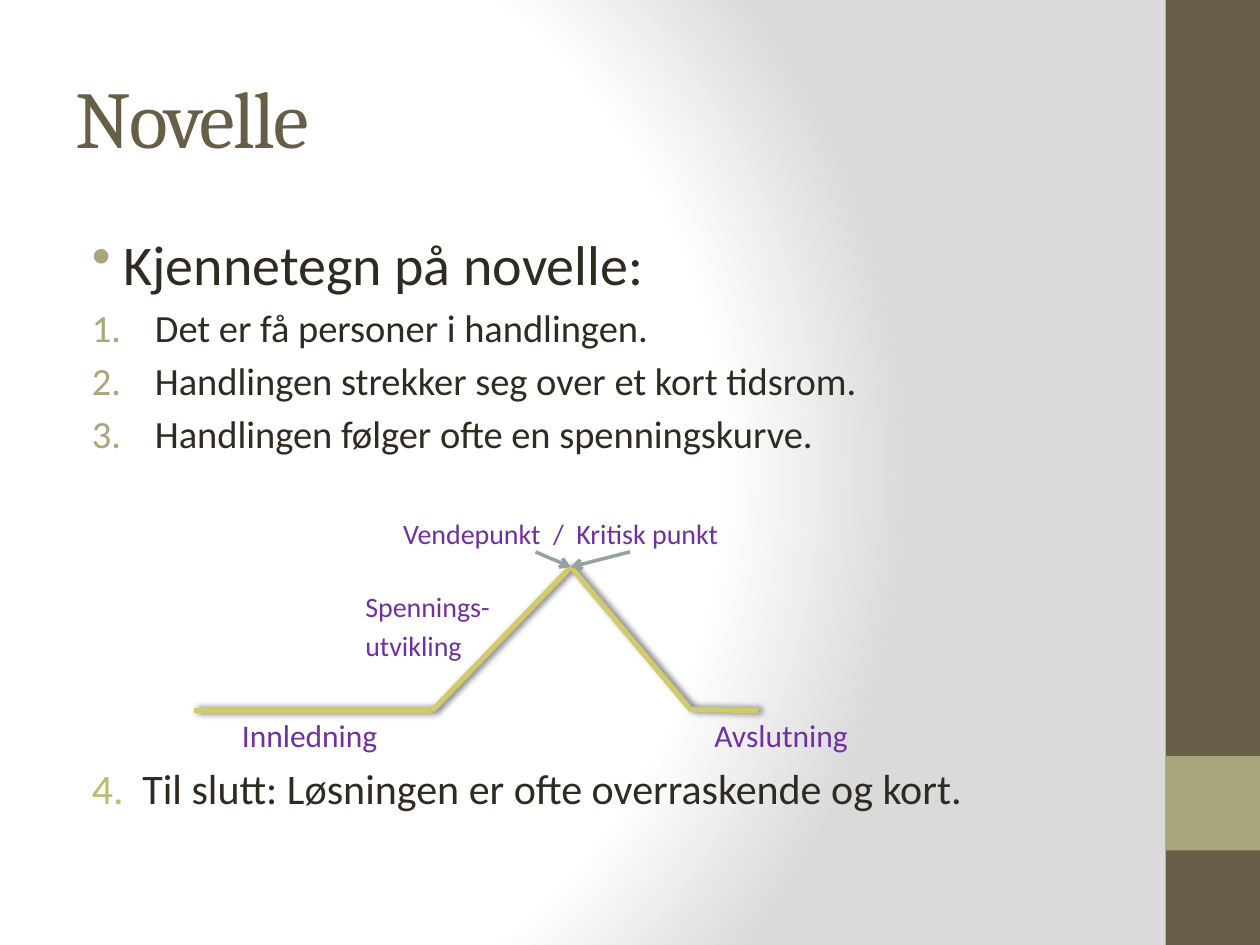
import pptx
import pptx.dml.color
import pptx.enum.shapes
import pptx.enum.text
import pptx.oxml
import pptx.util
from pptx.util import Inches, Pt

NS = 'xmlns:a="http://schemas.openxmlformats.org/drawingml/2006/main"'
BROWN, OLIVE, INK, PURPLE = "675E47", "A9A57C", "2F2B20", "7030A0"
GOLD, GREY, KHAKI = "D2CB6C", "95A39D", "C0BA71"


def color(hex_code):
    return pptx.dml.color.RGBColor.from_string(hex_code)


def xml(markup):
    """Parse one DrawingML element; the namespace goes in its first tag."""
    end = min(markup.index(c) for c in " />" if c in markup)
    return pptx.oxml.parse_xml(f"{markup[:end]} {NS}{markup[end:]}")


def write(paragraph, text, size=22, hue=INK, font="Calibri", before=0, tracking=0):
    paragraph.space_before = Pt(before)
    paragraph.alignment = pptx.enum.text.PP_ALIGN.LEFT
    run = paragraph.add_run()
    run.text = text
    run.font.name, run.font.size = font, Pt(size)
    run.font.color.rgb = color(hue)
    if tracking:
        run.font._element.set("spc", str(tracking * 100))


def mark(paragraph, bullet, hue, indent, hanging):
    """Give a paragraph a bullet or number with a hanging indent."""
    props = paragraph._p.get_or_add_pPr()
    props.set("marL", str(Inches(indent)))
    props.set("indent", str(-Inches(hanging)))
    props.append(xml(f'<a:buClr><a:srgbClr val="{hue}"/></a:buClr>'))
    props.append(xml(bullet))


class SlideBuilder:
    def __init__(self, slide):
        self.slide = slide

    def background(self):
        self.slide.background.fill.solid()
        holder = self.slide.element.xpath("//p:bgPr")[0]
        stops = "".join(
            f'<a:gs pos="{pos}000"><a:srgbClr val="{hue}"/></a:gs>'
            for pos, hue in [(0, "FFFFFF"), (75, "FFFFFF"), (100, "DADADA")])
        holder.replace(holder[0], xml(
            f'<a:gradFill rotWithShape="1"><a:gsLst>{stops}</a:gsLst><a:path path="circle">'
            '<a:fillToRect l="20000" t="50000" r="100000" b="50000"/></a:path></a:gradFill>'))

    def block(self, left, top, width, height, hue):
        block = self.slide.shapes.add_shape(
            pptx.enum.shapes.MSO_SHAPE.RECTANGLE,
            Inches(left), Inches(top), Inches(width), Inches(height))
        block.shadow.inherit = False
        block.fill.solid()
        block.fill.fore_color.rgb = color(hue)
        block.line.fill.background()

    def title(self, text):
        title = self.slide.shapes.title
        title.left, title.top = Inches(0.5), Inches(0.3)
        title.width, title.height = Inches(8.33), Inches(1.25)
        title.text_frame.vertical_anchor = pptx.enum.text.MSO_ANCHOR.MIDDLE
        write(title.text_frame.paragraphs[0], text, size=46, hue=BROWN,
              font="Cambria", tracking=-1)

    def text(self, left, top, width, height, lines, before=0, **style):
        """Place a text box without margins and return its paragraphs."""
        frame = self.slide.shapes.add_textbox(
            Inches(left), Inches(top), Inches(width), Inches(height)).text_frame
        frame.word_wrap = True
        frame.margin_left = frame.margin_right = 0
        frame.margin_top = frame.margin_bottom = 0
        for number, line in enumerate(lines):
            paragraph = frame.add_paragraph() if number else frame.paragraphs[0]
            write(paragraph, line, before=before if number else 0, **style)
        return frame.paragraphs

    def line(self, start, end, hue, width, arrow=False, shadow=False):
        line = self.slide.shapes.add_connector(
            pptx.enum.shapes.MSO_CONNECTOR.STRAIGHT,
            *(Inches(v) for v in (*start, *end)))
        line.line.color.rgb = color(hue)
        line.line.width = Pt(width)
        if arrow:
            line.line._get_or_add_ln().append(xml('<a:tailEnd type="arrow"/>'))
        effect = (f'<a:outerShdw blurRad="{Pt(4)}" dist="{Pt(2)}" dir="0">'
                  '<a:srgbClr val="000000"><a:alpha val="60000"/></a:srgbClr>'
                  '</a:outerShdw>') if shadow else ""
        line._element.spPr.append(xml(f"<a:effectLst>{effect}</a:effectLst>"))


def main():
    deck = pptx.Presentation()
    deck.slide_width, deck.slide_height = Inches(10), Inches(7.5)
    page = SlideBuilder(deck.slides.add_slide(deck.slide_layouts[5]))

    # Background, side band and title
    page.background()
    page.block(9.25, 0, 0.75, 7.5, BROWN)
    page.block(9.25, 6, 0.75, 0.75, OLIVE)
    page.title("Novelle")

    # Characteristics
    heading = page.text(0.73, 1.82, 8, 0.55, ["Kjennetegn på novelle:"], size=32)
    mark(heading[0], '<a:buChar char="•"/>', OLIVE, 0.25, 0.25)
    traits = page.text(0.73, 2.41, 8, 1.3, [
        "Det er få personer i handlingen.",
        "Handlingen strekker seg over et kort tidsrom.",
        "Handlingen følger ofte en spenningskurve.",
    ], before=4)
    for trait in traits:
        mark(trait, '<a:buAutoNum type="arabicPeriod"/>', OLIVE, 0.5, 0.5)
    ending = page.text(0.73, 6.05, 8, 0.42,
                       ["Til slutt: Løsningen er ofte overraskende og kort."], size=24)
    mark(ending[0], '<a:buAutoNum type="arabicPeriod" startAt="4"/>', KHAKI, 0.4, 0.4)

    # Labels of the tension curve
    page.text(3.2, 4.1, 3, 0.28, ["Vendepunkt  /  Kritisk punkt"], size=16, hue=PURPLE)
    page.text(2.9, 4.68, 1.2, 0.6, ["Spennings-", "utvikling"], size=16, hue=PURPLE, before=3)
    for left, label in [(1.92, "Innledning"), (5.67, "Avslutning")]:
        page.text(left, 5.68, 1.4, 0.31, [label], size=18, hue=PURPLE)

    # Tension curve, with arrows to its turning point
    peak = (4.53, 4.5)
    curve = [(1.54, 5.64), (3.43, 5.64), peak, (5.48, 5.63), (6.02, 5.64)]
    for start, end in zip(curve, curve[1:]):
        page.line(start, end, GOLD, 3, shadow=True)
    for left in (4.25, 5):
        page.line((left, 4.38), peak, GREY, 2, arrow=True)

    deck.save("out.pptx")


if __name__ == "__main__":
    main()
